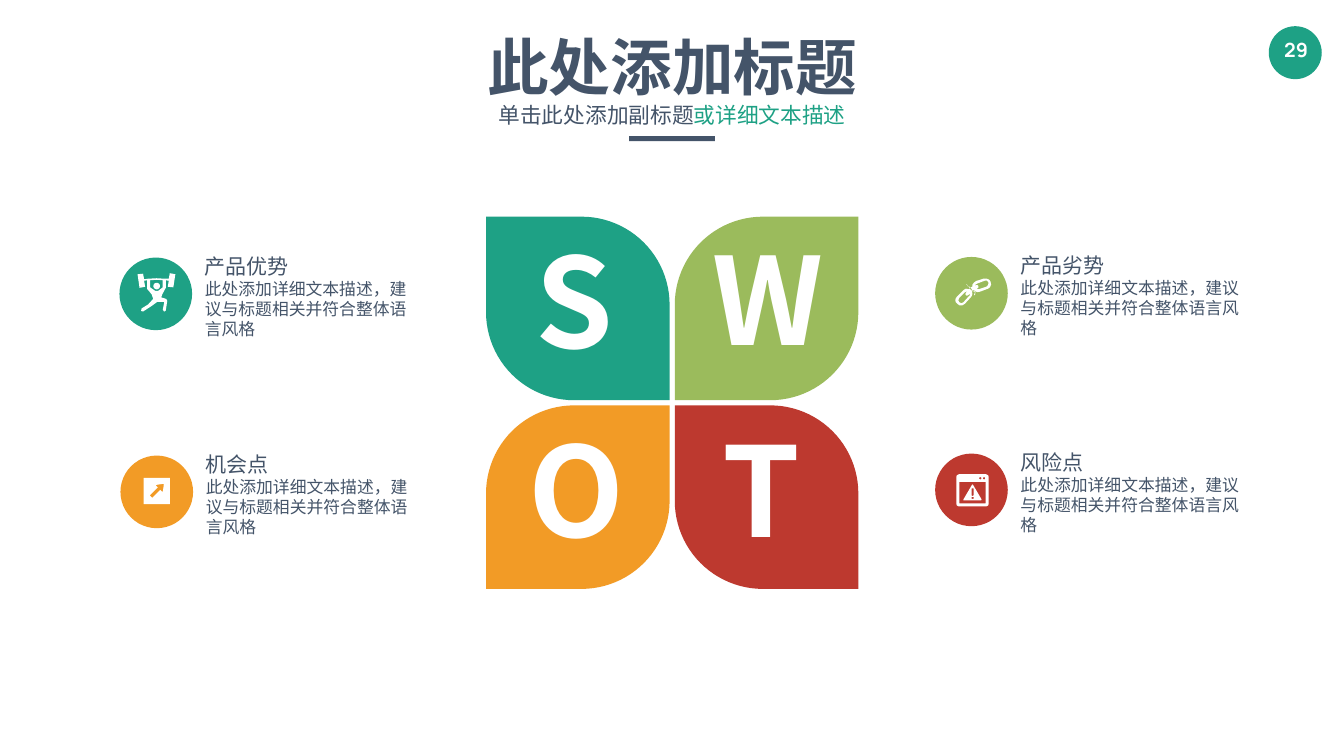
from dataclasses import dataclass
from math import cos, pi, sin

from lxml import etree
from pptx import Presentation
from pptx.dml.color import RGBColor
from pptx.enum.shapes import MSO_SHAPE
from pptx.enum.text import PP_ALIGN
from pptx.oxml.ns import qn
from pptx.util import Cm, Pt

OVAL = MSO_SHAPE.OVAL
RECTANGLE = MSO_SHAPE.RECTANGLE
LEAF = MSO_SHAPE.ROUND_2_DIAG_RECTANGLE
LEFT = PP_ALIGN.LEFT
CENTER = PP_ALIGN.CENTER


@dataclass(frozen=True)
class Theme:
    """Colours, fonts and type sizes of the slide."""
    ink: str = "445469"
    white: str = "FFFFFF"
    teal: str = "1EA185"
    green: str = "9BBB5C"
    orange: str = "F29B26"
    red: str = "BD392F"
    font: str = "Noto Sans CJK SC"
    number_font: str = "Manrope"
    title: int = 88
    subtitle: int = 31
    heading: int = 30
    body: int = 24
    number: int = 28
    letter: int = 178
    wide_letter: int = 173


THEME = Theme()
DETAIL = "此处添加详细文本描述，建议与标题相关并符合整体语言风格"


def ring(x, y, radius, steps=24):
    """Return the points of a circle."""
    return [(x + radius * cos(2 * pi * i / steps), y + radius * sin(2 * pi * i / steps))
            for i in range(steps)]


def box(left, top, right, bottom):
    """Return the corners of a rectangle."""
    return [(left, top), (right, top), (right, bottom), (left, bottom)]


LIFTER = [
    [(75, 2), (71, 28), (60, 27), (62, 15), (56, 14), (56, 29), (49, 42), (47, 48), (57, 51),
     (59, 55), (56, 74), (53, 76), (50, 73), (53, 57), (39, 57), (28, 65), (11, 76), (7, 75),
     (8, 70), (21, 62), (31, 51), (28, 42), (19, 31), (19, 14), (13, 15), (15, 27), (4, 29),
     (0, 2), (11, 1), (13, 12), (20, 11), (38, 10), (55, 11), (62, 11), (64, 0)],
    [(50, 14), (38, 13), (25, 14), (25, 28), (35, 35), (41, 35), (50, 28)],
    ring(38, 25.5, 6.5),
]
BROKEN_CHAIN = [
    [(35, 26), (32, 25), (30, 22), (28, 23), (22, 22), (17, 25), (5, 37), (2, 41), (1, 45),
     (2, 49), (5, 52), (9, 55), (15, 55), (20, 52), (31, 40), (34, 36), (35, 32), (34, 28)],
    [(28, 37), (17, 49), (13, 51), (9, 49), (7, 45), (9, 40), (20, 29), (25, 27), (22, 30),
     (21, 33), (22, 35), (24, 36), (26, 35), (30, 32), (30, 35)],
    [(71, 8), (68, 4), (63, 2), (57, 2), (42, 7), (38, 10), (35, 14), (35, 18), (32, 19),
     (33, 23), (35, 25), (37, 24), (40, 27), (45, 29), (50, 28), (66, 22), (70, 19), (72, 14)],
    [(63, 18), (48, 23), (45, 23), (43, 22), (46, 21), (47, 19), (47, 17), (45, 15), (43, 15),
     (40, 16), (41, 14), (44, 12), (60, 6), (64, 6), (67, 10), (66, 15)],
    [(37, 26), (41, 29), (40, 35), (38, 35), (40, 29), (35, 26)],
    [(23, 13), (24, 13), (26, 18), (29, 18), (31, 20), (30, 21), (28, 19), (26, 18)],
]
ARROW_TILE = [
    box(0, 0, 52, 52),
    [(38, 27), (37, 28), (33, 24), (17, 40), (12, 35), (28, 19), (24, 15), (25, 14), (39, 12),
     (40, 13)],
]
WARNING_WINDOW = [
    [(5, 0), (59, 0), (63, 2), (64, 5), (64, 59), (63, 62), (59, 64), (5, 64), (1, 62),
     (0, 59), (0, 5), (1, 2)],
    box(6, 15, 58, 58),
    ring(47.5, 8, 2.3),
    ring(55, 8, 2.3),
    [(14, 52), (49, 52), (50, 50), (33, 21), (32, 20), (31, 21), (14, 50)],
    [(30, 28), (34, 28), (34, 42), (33, 43), (31, 43), (30, 42)],
    box(30, 45, 34, 49),
]


def paint(shape, color):
    """Give a shape a flat fill without line or shadow."""
    shape.shadow.inherit = False
    shape.fill.solid()
    shape.fill.fore_color.rgb = RGBColor.from_string(color)
    shape.line.fill.background()


def add_block(slide, kind, left, top, width, height, color):
    """Add a flat preset shape."""
    shape = slide.shapes.add_shape(kind, Cm(left), Cm(top), Cm(width), Cm(height))
    paint(shape, color)
    return shape


def add_text(slide, frame, paragraphs, insets, align=CENTER, bold=False, font=THEME.font,
             wrap=True, spacing=None):
    """Add a text box whose paragraphs are lists of (text, size, color) runs."""
    text_frame = slide.shapes.add_textbox(*map(Cm, frame)).text_frame
    text_frame.word_wrap = wrap
    (text_frame.margin_left, text_frame.margin_top,
     text_frame.margin_right, text_frame.margin_bottom) = map(Cm, insets)
    for index, runs in enumerate(paragraphs):
        paragraph = text_frame.add_paragraph() if index else text_frame.paragraphs[0]
        paragraph.alignment = align
        paragraph.line_spacing = spacing
        for text, size, color in runs:
            run = paragraph.add_run()
            run.text = text
            run.font.size = Pt(size)
            run.font.bold = bold
            run.font.name = font
            run.font.color.rgb = RGBColor.from_string(color)
            etree.SubElement(run.font._element, qn("a:ea"), typeface=font)


def add_icon(slide, left, top, contours):
    """Draw white contours, given in hundredths of an inch, as one outline."""
    outlines = [[(Cm(x * 2.54 / 100), Cm(y * 2.54 / 100)) for x, y in contour]
                for contour in contours]
    builder = slide.shapes.build_freeform(*outlines[0][0])
    for index, (start, *rest) in enumerate(outlines):
        if index:
            builder.move_to(*start)
        builder.add_line_segments(rest, close=True)
    paint(builder.convert_to_shape(Cm(left), Cm(top)), THEME.white)


def add_page_number(slide, left, top, size):
    """Place the page number on its disc."""
    add_block(slide, OVAL, left, top, size, size, THEME.teal)
    add_text(slide, (left + 0.15, top + 0.36, 2.46, 1.7), [[("29", THEME.number, THEME.white)]],
             (0.51, 0.25, 0.51, 0.25), bold=True, font=THEME.number_font, wrap=False)


def add_header(slide, left, top, width):
    """Place title, subtitle and the short rule centred in the width."""
    add_text(slide, (left, top, width, 4.01), [[("此处添加标题", THEME.title, THEME.ink)]],
             (0.25, 0.13, 0.25, 0.13), bold=True)
    add_text(slide, (left, top + 3.2, width, 2.34),
             [[("单击此处添加副标题", THEME.subtitle, THEME.ink),
               ("或详细文本描述", THEME.subtitle, THEME.teal)]],
             (0.61, 0.3, 0.61, 0.3), spacing=1.2)
    add_block(slide, RECTANGLE, left + (width - 4.32) / 2, top + 5.51, 4.32, 0.25, THEME.ink)


def add_flower(slide, left, top, petal, gap):
    """Place the four lettered petals in a two by two grid."""
    petals = [("S", THEME.teal, THEME.letter, 0.5), ("W", THEME.green, THEME.wide_letter, 0.71),
              ("O", THEME.orange, THEME.letter, 0.56), ("T", THEME.red, THEME.letter, 0.41)]
    for index, (letter, color, size, shift) in enumerate(petals):
        row, column = divmod(index, 2)
        x, y = left + column * (petal + gap), top + row * (petal + gap)
        leaf = add_block(slide, LEAF, x, y, petal, petal, color)
        round_corners = (0, 0.48) if row == column else (0.48, 0)
        leaf.adjustments[0], leaf.adjustments[1] = round_corners
        add_text(slide, (x + shift, y + 0.12, 7.95, 8.13), [[(letter, size, THEME.white)]],
                 (0.51, 0.25, 0.51, 0.25), bold=True)


def add_point(slide, left, top, text_width, heading, color, icon, icon_x, icon_y):
    """Place an icon disc with its heading and detail text."""
    add_text(slide, (left + 4.3, top - 0.55, text_width, 4.7),
             [[(heading, THEME.heading, THEME.ink)], [(DETAIL, THEME.body, THEME.ink)]],
             (0, 0.33, 0, 0), align=LEFT)
    add_block(slide, OVAL, left, top, 3.66, 3.66, color)
    add_icon(slide, left + icon_x, top + icon_y, icon)


def main():
    """Build and save the slide."""
    deck = Presentation()
    deck.slide_width, deck.slide_height = Cm(67.72), Cm(38.1)
    slide = deck.slides.add_slide(deck.slide_layouts[6])
    add_page_number(slide, 63.93, 1.32, 2.67)
    add_header(slide, 16.69, 1.35, 34.34)
    add_flower(slide, 24.49, 10.92, 9.25, 0.26)
    add_point(slide, 6.02, 12.98, 10.85, "产品优势", THEME.teal, LIFTER, 0.91, 0.79)
    add_point(slide, 47.12, 12.95, 11.13, "产品劣势", THEME.green, BROKEN_CHAIN, 0.99, 1.04)
    add_point(slide, 6.07, 22.96, 10.8, "机会点", THEME.orange, ARROW_TILE, 1.17, 1.12)
    add_point(slide, 47.12, 22.86, 11.13, "风险点", THEME.red, WARNING_WINDOW, 1.07, 1.04)
    deck.save("out.pptx")


if __name__ == "__main__":
    main()
